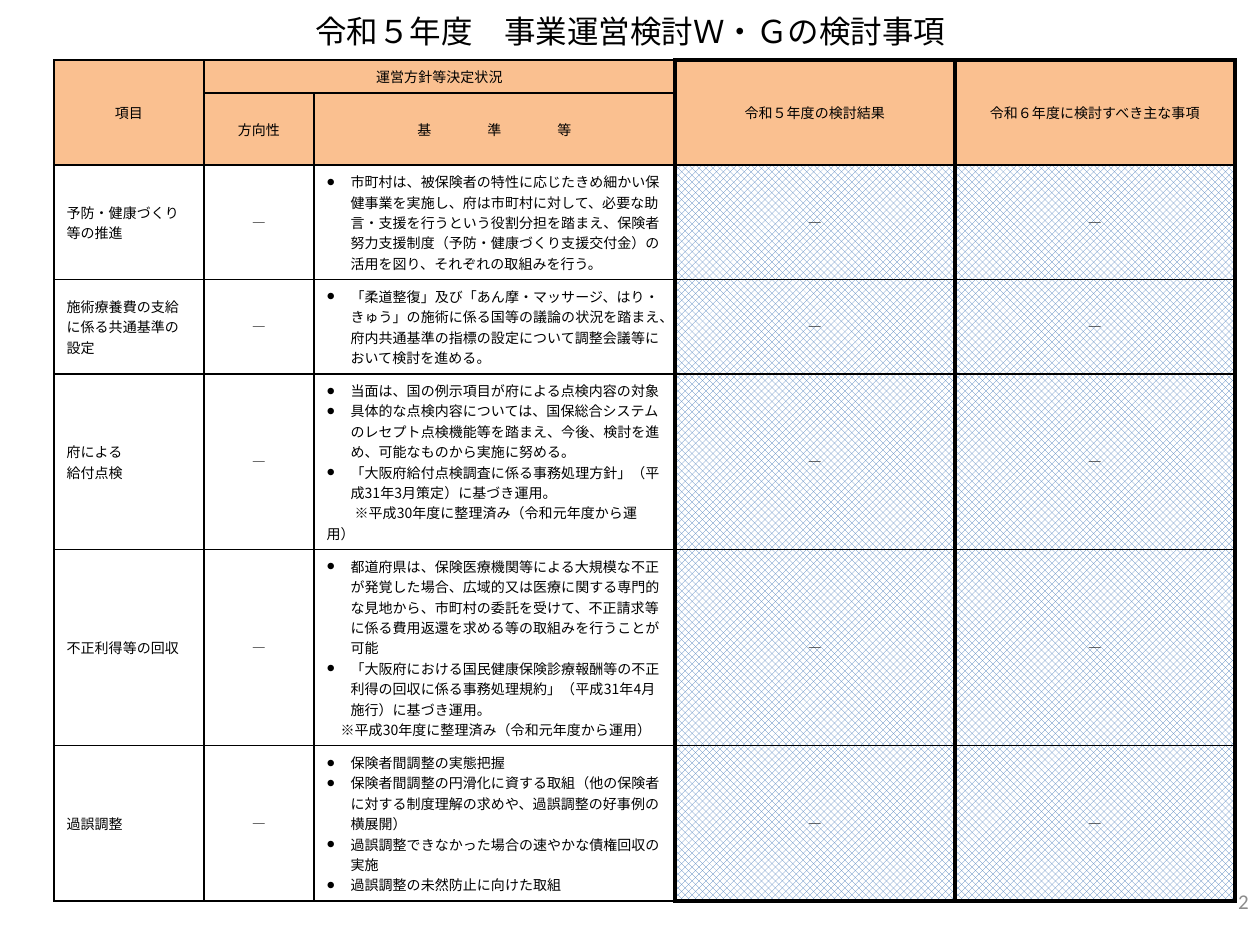
import dataclasses

import lxml.etree
import pptx
import pptx.dml.color
import pptx.enum.dml
import pptx.enum.lang
import pptx.enum.text
import pptx.oxml.ns
import pptx.util

ALIGN = pptx.enum.text.PP_ALIGN
MIDDLE = pptx.enum.text.MSO_ANCHOR.MIDDLE
EMU_PER_PX = 914400 / 126


@dataclasses.dataclass(frozen=True)
class Theme:
    body_font: str = "Noto Sans CJK JP"
    number_font: str = "Calibri"
    title_size: int = 18
    cell_size: int = 8
    number_size: int = 12
    text: str = "000000"
    muted: str = "8C8C8C"
    header: str = "FAC090"
    paper: str = "FFFFFF"
    hatch: str = "4F81BD"
    thin: float = 1
    thick: float = 2.25
    bullet_indent: int = 24


@dataclasses.dataclass(frozen=True)
class Line:
    """One paragraph: its text, first-line indent and whether it has a bullet."""
    text: str
    bullet: bool = False
    indent: int = 0


def px(length):
    return pptx.util.Emu(round(length * EMU_PER_PX))


def rgb(color):
    return pptx.dml.color.RGBColor.from_string(color)


def add_xml(parent, tag, **attributes):
    return lxml.etree.SubElement(parent, pptx.oxml.ns.qn(tag), attributes)


class SlideBuilder:
    def __init__(self, slide, theme):
        self.slide = slide
        self.theme = theme

    def add_run(self, paragraph, text, size=None, color=None, font=None, spacing=0):
        run = paragraph.add_run()
        run.text = text
        run.font.size = pptx.util.Pt(size or self.theme.cell_size)
        run.font.color.rgb = rgb(color or self.theme.text)
        run.font.name = font or self.theme.body_font
        run.font.language_id = pptx.enum.lang.MSO_LANGUAGE_ID.JAPANESE
        properties = run.font._element
        add_xml(properties, "a:ea", typeface=run.font.name)
        if spacing:
            properties.set("spc", str(spacing * 100))

    def add_title(self, text, left, top, width, height):
        title = self.slide.shapes.title
        title.left, title.top, title.width, title.height = map(px, (left, top, width, height))
        title.text_frame.vertical_anchor = MIDDLE
        paragraph = title.text_frame.paragraphs[0]
        paragraph.alignment = ALIGN.CENTER
        self.add_run(paragraph, text, self.theme.title_size)

    def add_page_number(self, text, left, top, width, height):
        box = self.slide.shapes.add_textbox(*map(px, (left, top, width, height)))
        box.text_frame.word_wrap = True
        box.text_frame.vertical_anchor = MIDDLE
        paragraph = box.text_frame.paragraphs[0]
        paragraph.alignment = ALIGN.RIGHT
        self.add_run(paragraph, text, self.theme.number_size, self.theme.muted,
                     self.theme.number_font)

    def add_table(self, left, top, height, column_widths, row_heights):
        frame = self.slide.shapes.add_table(
            len(row_heights), len(column_widths), px(left), px(top),
            px(sum(column_widths)), px(height))
        table = frame.table
        table.first_row = table.horz_banding = False
        for column, width in zip(table.columns, column_widths):
            column.width = px(width)
        for row, row_height in zip(table.rows, row_heights):
            row.height = px(row_height)
        frame.height = px(height)
        return table

    def style_cell(self, cell, borders, color, hatched=False):
        """Give borders as widths in the order left, right, top, bottom."""
        properties = cell._tc.get_or_add_tcPr()
        for side, width in zip("LRTB", borders):
            line = add_xml(properties, f"a:ln{side}", w=str(pptx.util.Pt(width)))
            add_xml(add_xml(line, "a:solidFill"), "a:srgbClr", val=self.theme.text)
        if hatched:
            cell.fill.patterned()
            cell.fill.pattern = pptx.enum.dml.MSO_PATTERN.OUTLINED_DIAMOND
            cell.fill.fore_color.rgb = rgb(self.theme.hatch)
            cell.fill.back_color.rgb = rgb(color)
        else:
            cell.fill.solid()
            cell.fill.fore_color.rgb = rgb(color)
        cell.vertical_anchor = MIDDLE

    def write_cell(self, cell, lines, alignment=ALIGN.LEFT):
        for index, line in enumerate(lines):
            frame = cell.text_frame
            paragraph = frame.add_paragraph() if index else frame.paragraphs[0]
            paragraph.alignment = alignment
            properties = paragraph._p.get_or_add_pPr()
            if line.bullet:
                indent = px(self.theme.bullet_indent)
                properties.set("marL", str(indent))
                properties.set("indent", str(-indent))
                add_xml(properties, "a:buFont", typeface=self.theme.number_font)
                add_xml(properties, "a:buChar", char="●")
            elif line.indent:
                properties.set("marL", "0")
                properties.set("indent", str(px(line.indent)))
            self.add_run(paragraph, line.text)

    def write_spread(self, cell, text, spacing):
        """Centre the text with a wide gap after each letter but the last."""
        paragraph = cell.text_frame.paragraphs[0]
        paragraph.alignment = ALIGN.CENTER
        self.add_run(paragraph, text[:-1], spacing=spacing)
        self.add_run(paragraph, text[-1])


def bullets(*texts):
    return [Line(text, bullet=True) for text in texts]


COLUMN_WIDTHS = [150, 110, 361, 280, 280]
ROW_HEIGHTS = [29, 72, 82, 82, 140, 113, 48]
HEADER_ROWS = 2
FIRST_RESULT_COLUMN = 3
SETTLED = "※平成30年度に整理済み（令和元年度から運用）"
# row, column, rows spanned, columns spanned, text
HEADERS = [
    (0, 0, 2, 1, "項目"),
    (0, 1, 1, 2, "運営方針等決定状況"),
    (0, 3, 2, 1, "令和５年度の検討結果"),
    (0, 4, 2, 1, "令和６年度に検討すべき主な事項"),
    (1, 1, 1, 1, "方向性"),
]
ITEMS = [
    (["予防・健康づくり等の推進"], bullets(
        "市町村は、被保険者の特性に応じたきめ細かい保健事業を実施し、府は市町村に対して、必要な助言・支援を行うという役割分担を踏まえ、保険者努力支援制度（予防・健康づくり支援交付金）の活用を図り、それぞれの取組みを行う。")),
    (["施術療養費の支給", "に係る共通基準の設定"], bullets(
        "「柔道整復」及び「あん摩・マッサージ、はり・きゅう」の施術に係る国等の議論の状況を踏まえ、府内共通基準の指標の設定について調整会議等において検討を進める。")),
    (["府による", "給付点検"], bullets(
        "当面は、国の例示項目が府による点検内容の対象",
        "具体的な点検内容については、国保総合システムのレセプト点検機能等を踏まえ、今後、検討を進め、可能なものから実施に努める。",
        "「大阪府給付点検調査に係る事務処理方針」（平成31年3月策定）に基づき運用。",
    ) + [Line(SETTLED, indent=28)]),
    (["不正利得等の回収"], bullets(
        "都道府県は、保険医療機関等による大規模な不正が発覚した場合、広域的又は医療に関する専門的な見地から、市町村の委託を受けて、不正請求等に係る費用返還を求める等の取組みを行うことが可能",
        "「大阪府における国民健康保険診療報酬等の不正利得の回収に係る事務処理規約」（平成31年4月施行）に基づき運用。",
    ) + [Line(SETTLED, indent=14)]),
    (["過誤調整"], bullets(
        "保険者間調整の実態把握",
        "保険者間調整の円滑化に資する取組（他の保険者に対する制度理解の求めや、過誤調整の好事例の横展開）",
        "過誤調整できなかった場合の速やかな債権回収の実施",
        "過誤調整の未然防止に向けた取組")),
]


def fill_table(builder, table):
    theme = builder.theme
    last_row = len(ROW_HEIGHTS) - 1
    for row in range(len(ROW_HEIGHTS)):
        for column in range(len(COLUMN_WIDTHS)):
            result = column >= FIRST_RESULT_COLUMN
            heavy = (result, column >= FIRST_RESULT_COLUMN - 1,
                     result and row == 0, result and row == last_row)
            borders = [theme.thick if side else theme.thin for side in heavy]
            header = row < HEADER_ROWS
            builder.style_cell(table.cell(row, column), borders,
                               theme.header if header else theme.paper,
                               hatched=result and not header)
    for row, column, rows, columns, text in HEADERS:
        cell = table.cell(row, column)
        if rows * columns > 1:
            cell.merge(table.cell(row + rows - 1, column + columns - 1))
        builder.write_cell(cell, [Line(text)], ALIGN.CENTER)
    builder.write_spread(table.cell(1, 2), "基準等", spacing=32)
    for row, (names, standards) in enumerate(ITEMS, HEADER_ROWS):
        builder.write_cell(table.cell(row, 0), [Line(name) for name in names])
        builder.write_cell(table.cell(row, 2), standards)
        for column in (1, 3, 4):
            builder.write_cell(table.cell(row, column), [Line("―")], ALIGN.CENTER)


def main():
    presentation = pptx.Presentation()
    presentation.slide_width, presentation.slide_height = px(1260), px(945)
    slide = presentation.slides.add_slide(presentation.slide_layouts[0])
    subtitle = slide.placeholders[1].element
    subtitle.getparent().remove(subtitle)

    builder = SlideBuilder(slide, Theme())
    builder.add_title("令和５年度　事業運営検討Ｗ・Ｇの検討事項", 25, 1, 1211, 60)
    fill_table(builder, builder.add_table(54, 60, 714, COLUMN_WIDTHS, ROW_HEIGHTS))
    builder.add_page_number("2", 968, 876, 293, 50)
    presentation.save("out.pptx")


if __name__ == "__main__":
    main()
